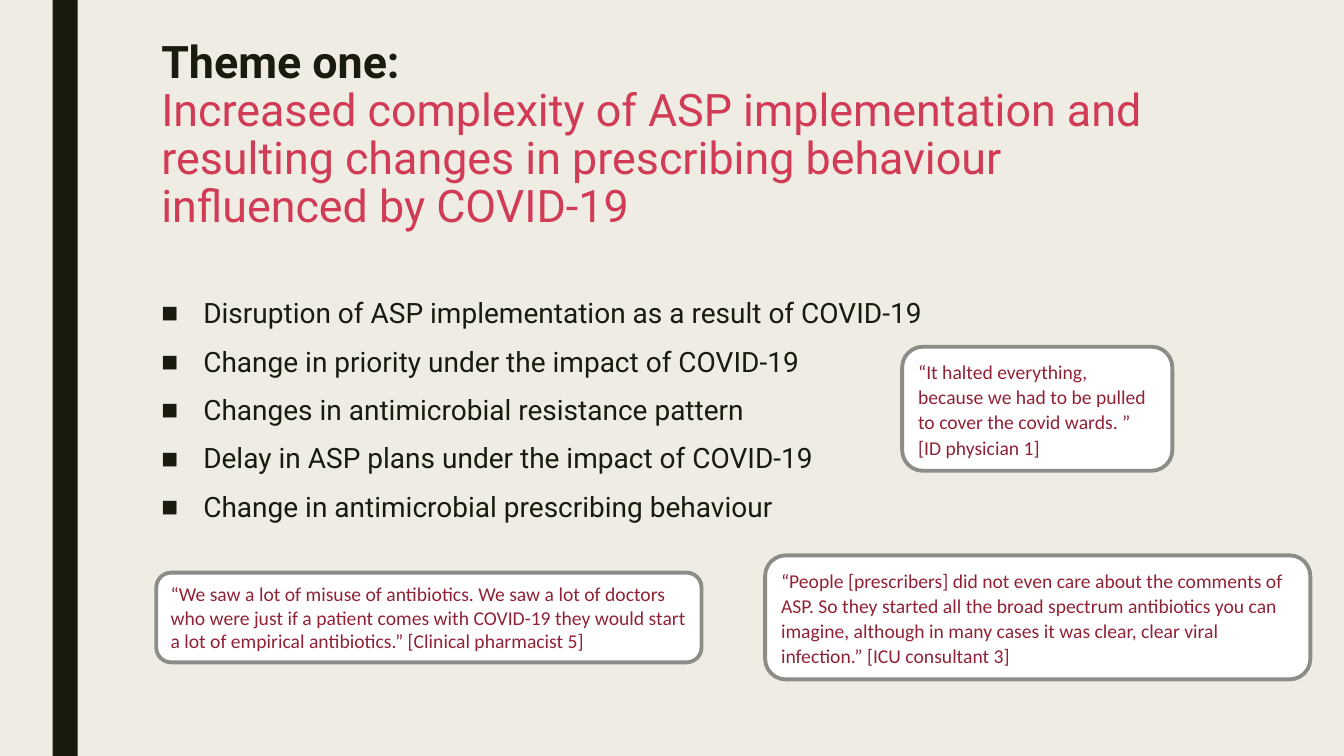
from copy import deepcopy
from dataclasses import dataclass

from lxml.etree import SubElement
from pptx import Presentation
from pptx.dml.color import RGBColor
from pptx.enum.shapes import MSO_SHAPE as Shape
from pptx.enum.text import MSO_ANCHOR as Anchor, MSO_AUTO_SIZE as AutoSize, PP_ALIGN as Align
from pptx.oxml.ns import qn
from pptx.slide import Slide
from pptx.util import Pt


@dataclass(frozen=True)
class Theme:
    background: RGBColor = RGBColor(0xEF, 0xED, 0xE3)
    dark: RGBColor = RGBColor(0x19, 0x1B, 0x0E)
    accent: RGBColor = RGBColor(0xD1, 0x3B, 0x56)
    quote: RGBColor = RGBColor(0x91, 0x22, 0x36)
    quote_fill: RGBColor = RGBColor(0xFF, 0xFF, 0xFF)
    quote_line: RGBColor = RGBColor(0x8C, 0x8D, 0x86)
    main_font: str = "Roboto"
    quote_font: str = "Calibri"
    title_size: float = 32
    body_size: float = 20
    quote_size: float = 14


@dataclass(frozen=True)
class Box:
    left: float
    top: float
    width: float
    height: float


@dataclass(frozen=True)
class Quote:
    box: Box
    text: str
    line_spacing: float = 1.0


THEME = Theme()
BAR = Box(37.5, 0, 18, 540)
TITLE_BOX = Box(108, 25.2, 756, 148.3)
BODY_BOX = Box(108, 209.5, 756, 252)
HEADING = "Theme one:"
SUBJECT = ("Increased complexity of ASP implementation and resulting changes "
           "in prescribing behaviour influenced by COVID-19")
SUBTHEMES = [
    "Disruption of ASP implementation as a result of COVID-19",
    "Change in priority under the impact of COVID-19",
    "Changes in antimicrobial resistance pattern",
    "Delay in ASP plans under the impact of COVID-19",
    "Change in antimicrobial prescribing behaviour",
]
QUOTES = [
    Quote(Box(644.4, 247.7, 193, 88.6),
          "“It halted everything, because we had to be pulled to cover the "
          "covid wards. ” [ID physician 1]", 1.07),
    Quote(Box(546.5, 396.7, 389.5, 88.6),
          "“People [prescribers] did not even care about the comments of ASP. "
          "So they started all the broad spectrum antibiotics you can imagine, "
          "although in many cases it was clear, clear viral infection.” "
          "[ICU consultant 3]", 1.07),
    Quote(Box(111.6, 409, 389.5, 64.1),
          "“We saw a lot of misuse of antibiotics. We saw a lot of doctors who "
          "were just if a patient comes with COVID-19 they would start a lot of "
          "empirical antibiotics.” [Clinical pharmacist 5]"),
]


def place(sp, box: Box) -> None:
    sp.left, sp.top = Pt(box.left), Pt(box.top)
    sp.width, sp.height = Pt(box.width), Pt(box.height)


def style_run(r, font: str, size: float, color: RGBColor, bold: bool = False) -> None:
    r.font.name, r.font.size, r.font.bold = font, Pt(size), bold
    r.font.color.rgb = color


def add_box(s: Slide, kind: Shape, box: Box, fill: RGBColor):
    sp = s.shapes.add_shape(kind, Pt(box.left), Pt(box.top), Pt(box.width), Pt(box.height))
    sp.shadow.inherit = False
    sp.fill.solid()
    sp.fill.fore_color.rgb = fill
    sp.line.fill.background()
    return sp


def fill_title(s: Slide) -> None:
    sp = s.shapes.title
    place(sp, TITLE_BOX)
    tf = sp.text_frame
    tf.text = f"{HEADING}\v{SUBJECT}"
    tf.auto_size, tf.vertical_anchor, tf.word_wrap = AutoSize.NONE, Anchor.TOP, True
    p = tf.paragraphs[0]
    p.alignment, p.line_spacing = Align.LEFT, 0.89
    heading, subject = p.runs
    style_run(heading, THEME.main_font, THEME.title_size, THEME.dark, True)
    style_run(subject, THEME.main_font, THEME.title_size, THEME.accent)
    # The line break takes the heading's type size
    line_break = p._p.find(qn("a:br"))
    line_break.insert(0, deepcopy(heading._r.get_or_add_rPr()))


def fill_body(s: Slide) -> None:
    sp = s.placeholders[1]
    place(sp, BODY_BOX)
    tf = sp.text_frame
    tf.text = "\n".join(SUBTHEMES)
    tf.auto_size, tf.vertical_anchor, tf.word_wrap = AutoSize.NONE, Anchor.TOP, True
    for p in tf.paragraphs:
        p.line_spacing, p.space_before, p.space_after = 0.94, Pt(10), Pt(2)
        style_run(p.runs[0], THEME.main_font, THEME.body_size, THEME.dark)
        # Square bullet with a hanging indent
        pPr = p._p.get_or_add_pPr()
        pPr.set("marL", str(Pt(30)))
        pPr.set("indent", str(-Pt(30)))
        SubElement(pPr, qn("a:buChar"), char="■")


def add_quote(s: Slide, quote: Quote) -> None:
    sp = add_box(s, Shape.ROUNDED_RECTANGLE, quote.box, THEME.quote_fill)
    sp.line.color.rgb = THEME.quote_line
    sp.line.width = Pt(2.75)
    tf = sp.text_frame
    tf.text = quote.text
    tf.word_wrap, tf.auto_size = True, AutoSize.SHAPE_TO_FIT_TEXT
    tf.vertical_anchor = Anchor.MIDDLE
    p = tf.paragraphs[0]
    p.alignment, p.line_spacing = Align.LEFT, quote.line_spacing
    style_run(p.runs[0], THEME.quote_font, THEME.quote_size, THEME.quote)


def main() -> None:
    prs = Presentation()
    prs.slide_width, prs.slide_height = Pt(960), Pt(540)
    s = prs.slides.add_slide(prs.slide_layouts[1])

    # Background and side bar
    s.background.fill.solid()
    s.background.fill.fore_color.rgb = THEME.background
    add_box(s, Shape.RECTANGLE, BAR, THEME.dark)

    # Title, list and quotes
    fill_title(s)
    fill_body(s)
    for quote in QUOTES:
        add_quote(s, quote)
    prs.save("out.pptx")


if __name__ == "__main__":
    main()
